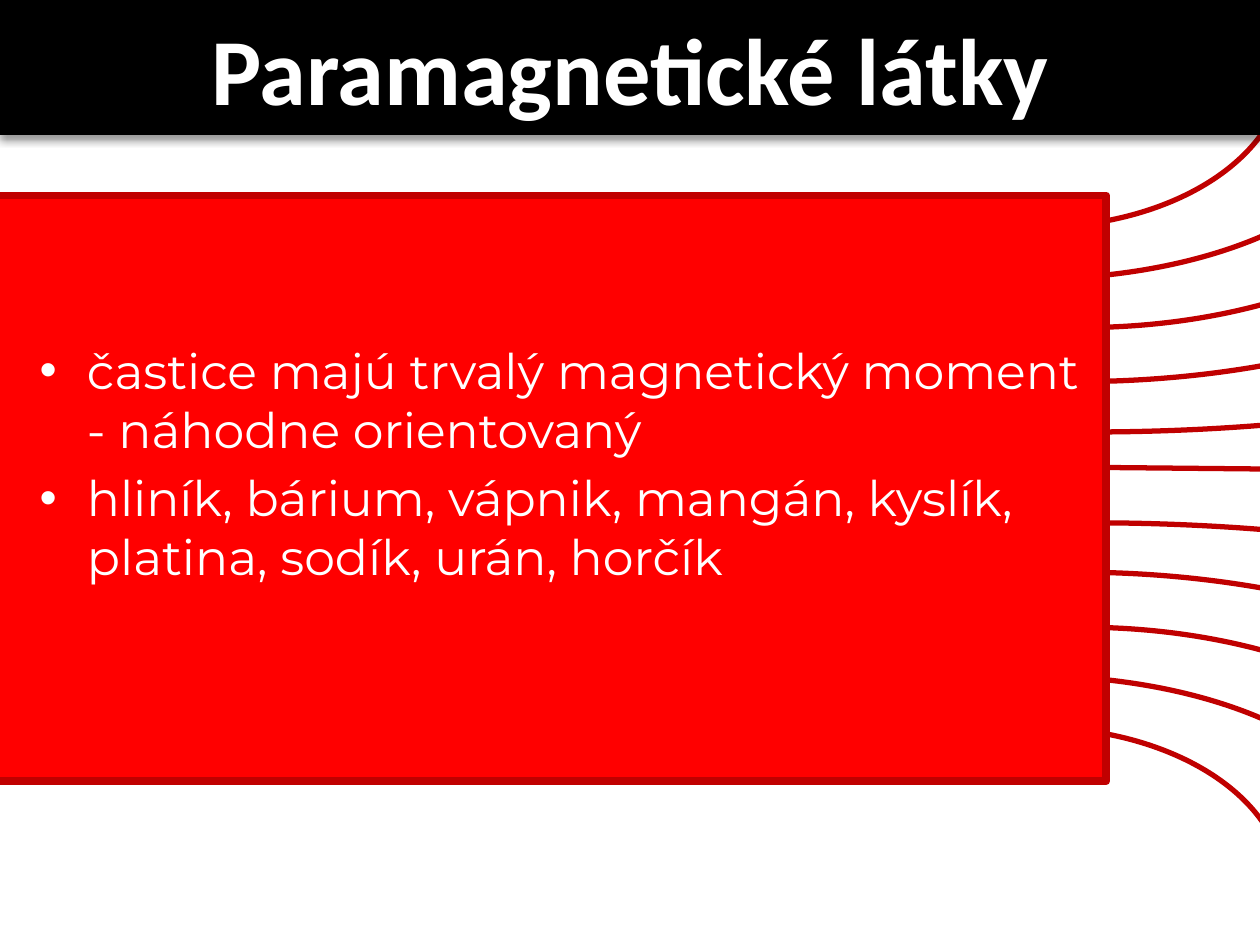
from lxml import etree
from pptx import Presentation
from pptx.dml.color import RGBColor
from pptx.enum.shapes import MSO_CONNECTOR, MSO_SHAPE
from pptx.enum.text import MSO_ANCHOR, MSO_AUTO_SIZE, PP_ALIGN
from pptx.oxml.ns import qn
from pptx.util import Cm, Pt

ARC = MSO_SHAPE.ARC
STRAIGHT = MSO_CONNECTOR.STRAIGHT
TOP, MIDDLE = MSO_ANCHOR.TOP, MSO_ANCHOR.MIDDLE
CENTER, LEFT = PP_ALIGN.CENTER, PP_ALIGN.LEFT
NO_AUTOFIT = MSO_AUTO_SIZE.NONE

COLORS = {"band": "000000", "magnet": "FF0000", "field": "C00000", "text": "FFFFFF"}

HEADING = "Paramagnetické látky"
PROPERTIES = [
    "častice majú trvalý magnetický moment - náhodne orientovaný",
    "hliník, bárium, vápnik, mangán, kyslík, platina, sodík, urán, horčík",
]

HEADING_BOX = (0, 0, 25.4, 2.72)
MAGNET_BOX = (-0.51, 3.94, 22.81, 11.81)
AXIS_LINE = (21.89, 9.42, 33.3, 9.53)

WIDE_SWEEP = (175.32, 0.87)
FIELD_ARCS = [
    {"left": 17.65, "size": (6.48, 10.01), "tops": (-3.66, 12.9), "sweeps": (None, (153.95, 0))},
    {"left": 17.25, "size": (7.11, 14.2), "tops": (-5.03, 10.08), "sweeps": (None, None)},
    {"left": 16.97, "size": (9.68, 16.99), "tops": (-6.73, 8.99), "sweeps": (None, None)},
    {"left": 15.7, "size": (11.99, 23.22), "tops": (-9.91, 5.92), "sweeps": (None, None)},
    {"left": 16, "size": (11.99, 32.61), "tops": (-13.59, 0.23), "sweeps": (WIDE_SWEEP, WIDE_SWEEP)},
]

HEADING_FONT = {"name": "Calibri", "size": Pt(54), "bold": True}
PROPERTY_FONT = {"name": "Montserrat", "size": Pt(28), "bold": False}
HEADING_FRAME = {"vertical_anchor": MIDDLE, "word_wrap": True, "auto_size": NO_AUTOFIT}
MAGNET_FRAME = {
    "vertical_anchor": TOP,
    "word_wrap": True,
    "auto_size": NO_AUTOFIT,
    "margin_left": Cm(1.31),
    "margin_top": Cm(2.92),
}


def color(key):
    return RGBColor.from_string(COLORS[key])


def apply(target, values):
    for attribute, value in values.items():
        setattr(target, attribute, value)


def style_line(line, width):
    line.color.rgb = color("field")
    line.width = Pt(width)


def add_effects(part):
    return etree.SubElement(part.element.spPr, qn("a:effectLst"))


def add_field_arc(slide, left, top, size, sweep, mirrored):
    arc = slide.shapes.add_shape(ARC, Cm(left), Cm(top), *map(Cm, size))
    arc.shadow.inherit = False
    arc.fill.background()
    style_line(arc.line, 3)
    arc.rotation = 270 if mirrored else 90
    if mirrored:
        arc.element.spPr.find(qn("a:xfrm")).set("flipV", "1")
    for index, angle in enumerate(sweep or ()):
        arc.adjustments[index] = angle


def fill_placeholder(slide, holder, box, fill, frame, texts, font, align):
    apply(holder, dict(zip(("left", "top", "width", "height"), map(Cm, box))))
    holder.fill.solid()
    holder.fill.fore_color.rgb = color(fill)
    apply(holder.text_frame, frame)
    holder.text_frame.text = "\n".join(texts)
    for paragraph in holder.text_frame.paragraphs:
        paragraph.alignment = align
        run_font = paragraph.runs[0].font
        apply(run_font, font)
        run_font.color.rgb = color("text")
    holder.text_frame.paragraphs[0].space_before = Pt(0)
    slide.shapes.element.append(holder.element)


def main():
    deck = Presentation()
    deck.slide_width, deck.slide_height = Cm(25.4), Cm(19.05)
    slide = deck.slides.add_slide(deck.slide_layouts[1])
    heading, magnet = slide.shapes.title, slide.placeholders[1]

    for field in FIELD_ARCS:
        for mirrored, (top, sweep) in enumerate(zip(field["tops"], field["sweeps"])):
            add_field_arc(slide, field["left"], top, field["size"], sweep, mirrored)

    axis = slide.shapes.add_connector(STRAIGHT, *map(Cm, AXIS_LINE))
    style_line(axis.line, 3)
    add_effects(axis)

    fill_placeholder(slide, heading, HEADING_BOX, "band", HEADING_FRAME,
                     [HEADING], HEADING_FONT, CENTER)
    shadow = etree.SubElement(add_effects(heading), qn("a:outerShdw"),
                              blurRad=str(Pt(4)), dist=str(Pt(3)),
                              dir="5400000", rotWithShape="0")
    shade = etree.SubElement(shadow, qn("a:srgbClr"), val=COLORS["band"])
    etree.SubElement(shade, qn("a:alpha"), val="40000")

    fill_placeholder(slide, magnet, MAGNET_BOX, "magnet", MAGNET_FRAME,
                     PROPERTIES, PROPERTY_FONT, LEFT)
    style_line(magnet.line, 4.5)

    deck.save("out.pptx")


if __name__ == "__main__":
    main()
